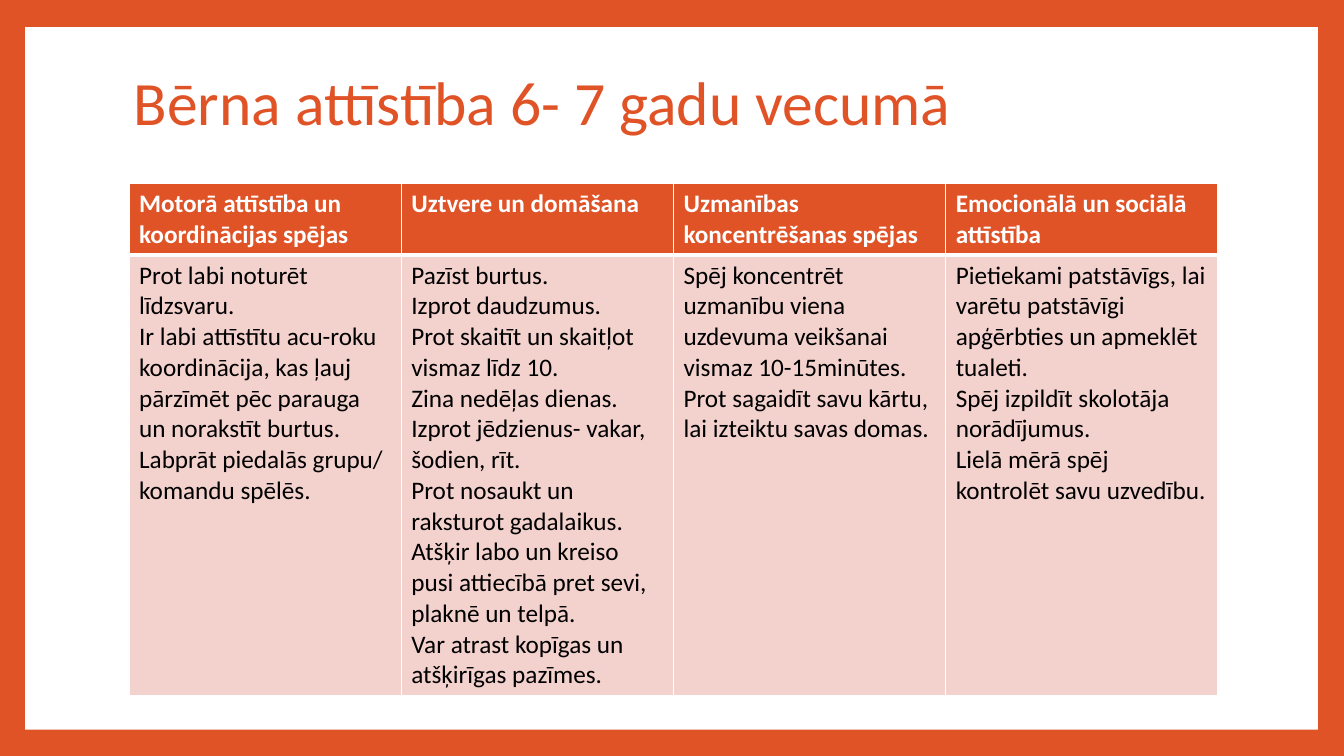
from lxml import etree
from pptx import Presentation
from pptx import util as u
from pptx.dml import color
from pptx.enum import shapes, text
from pptx.oxml import ns

TITLE = "Bērna attīstība 6- 7 gadu vecumā"
AREAS = [
    ("Motorā attīstība un koordinācijas spējas", [
        "Prot labi noturēt līdzsvaru.",
        "Ir labi attīstītu acu-roku koordinācija, kas ļauj pārzīmēt pēc parauga un norakstīt burtus.",
        "Labprāt piedalās grupu/ komandu spēlēs.",
    ]),
    ("Uztvere un domāšana", [
        "Pazīst burtus.",
        "Izprot daudzumus.",
        "Prot skaitīt un skaitļot vismaz līdz 10.",
        "Zina nedēļas dienas.",
        "Izprot jēdzienus- vakar, šodien, rīt.",
        "Prot nosaukt un raksturot gadalaikus.",
        "Atšķir labo un kreiso pusi attiecībā pret sevi, plaknē un telpā.",
        "Var atrast kopīgas un atšķirīgas pazīmes.",
    ]),
    ("Uzmanības koncentrēšanas spējas", [
        "Spēj koncentrēt uzmanību viena uzdevuma veikšanai vismaz 10-15minūtes.",
        "Prot sagaidīt savu kārtu, lai izteiktu savas domas.",
    ]),
    ("Emocionālā un sociālā attīstība", [
        "Pietiekami patstāvīgs, lai varētu patstāvīgi apģērbties un apmeklēt tualeti.",
        "Spēj izpildīt skolotāja norādījumus.",
        "Lielā mērā spēj kontrolēt savu uzvedību.",
    ]),
]
ORANGE, PINK, WHITE, BLACK = "DF5327", "F3D1CD", "FFFFFF", "000000"
TITLE_FONT = {"name": "Calibri", "size": u.Pt(44), "bold": False}
HEADING_FONT = {"name": "Calibri", "size": u.Pt(18), "bold": True}
SKILL_FONT = {**HEADING_FONT, "bold": False}
HEADING_BORDERS = {"L": 1, "R": 1, "T": 1, "B": 3}
SKILL_BORDERS = {"L": 1, "R": 1, "T": 3, "B": 1}
COLUMN_WIDTH = 2.7
ROW_HEIGHTS = [0.71, 4.37]


def paint(target, hex_color):
    if hasattr(target, "solid"):
        target.solid()
        target = target.fore_color
    target.rgb = color.RGBColor.from_string(hex_color)


def write(frame, lines, font_values, hex_color):
    for number, line in enumerate(lines):
        paragraph = frame.add_paragraph() if number else frame.paragraphs[0]
        font = paragraph.add_run().font
        paragraph.runs[0].text = line
        for name, value in font_values.items():
            setattr(font, name, value)
        paint(font.color, hex_color)


def add_borders(cell, widths):
    properties = cell._tc.get_or_add_tcPr()
    for position, (side, width) in enumerate(widths.items()):
        border = etree.Element(ns.qn(f"a:ln{side}"), w=str(u.Pt(width)))
        fill = etree.SubElement(border, ns.qn("a:solidFill"))
        etree.SubElement(fill, ns.qn("a:srgbClr"), val=WHITE)
        properties.insert(position, border)


def main():
    deck = Presentation()
    deck.slide_width, deck.slide_height = u.Inches(13.33), u.Inches(7.5)
    slide = deck.slides.add_slide(deck.slide_layouts[6])
    paint(slide.background.fill, ORANGE)

    panel = slide.shapes.add_shape(
        shapes.MSO_SHAPE.RECTANGLE, *map(u.Inches, (0.25, 0.27, 12.82, 6.97)))
    panel.shadow.inherit = False
    paint(panel.fill, WHITE)
    panel.line.fill.background()

    title = slide.shapes.add_textbox(*map(u.Inches, (1.23, 0.47, 10.8, 1.15))).text_frame
    title.word_wrap = True
    title.vertical_anchor = text.MSO_ANCHOR.MIDDLE
    write(title, [TITLE], TITLE_FONT, ORANGE)
    title.paragraphs[0].line_spacing = 0.9

    table = slide.shapes.add_table(
        len(ROW_HEIGHTS), len(AREAS), u.Inches(1.28), u.Inches(1.82),
        u.Inches(COLUMN_WIDTH * len(AREAS)), u.Inches(sum(ROW_HEIGHTS))).table
    for row, height in zip(table.rows, ROW_HEIGHTS):
        row.height = u.Inches(height)
    for column, (heading, skills) in enumerate(AREAS):
        table.columns[column].width = u.Inches(COLUMN_WIDTH)
        looks = [
            ([heading], HEADING_FONT, WHITE, ORANGE, HEADING_BORDERS),
            (skills, SKILL_FONT, BLACK, PINK, SKILL_BORDERS),
        ]
        for row, (lines, font, ink, fill, borders) in enumerate(looks):
            cell = table.cell(row, column)
            write(cell.text_frame, lines, font, ink)
            paint(cell.fill, fill)
            add_borders(cell, borders)

    deck.save("out.pptx")


if __name__ == "__main__":
    main()
